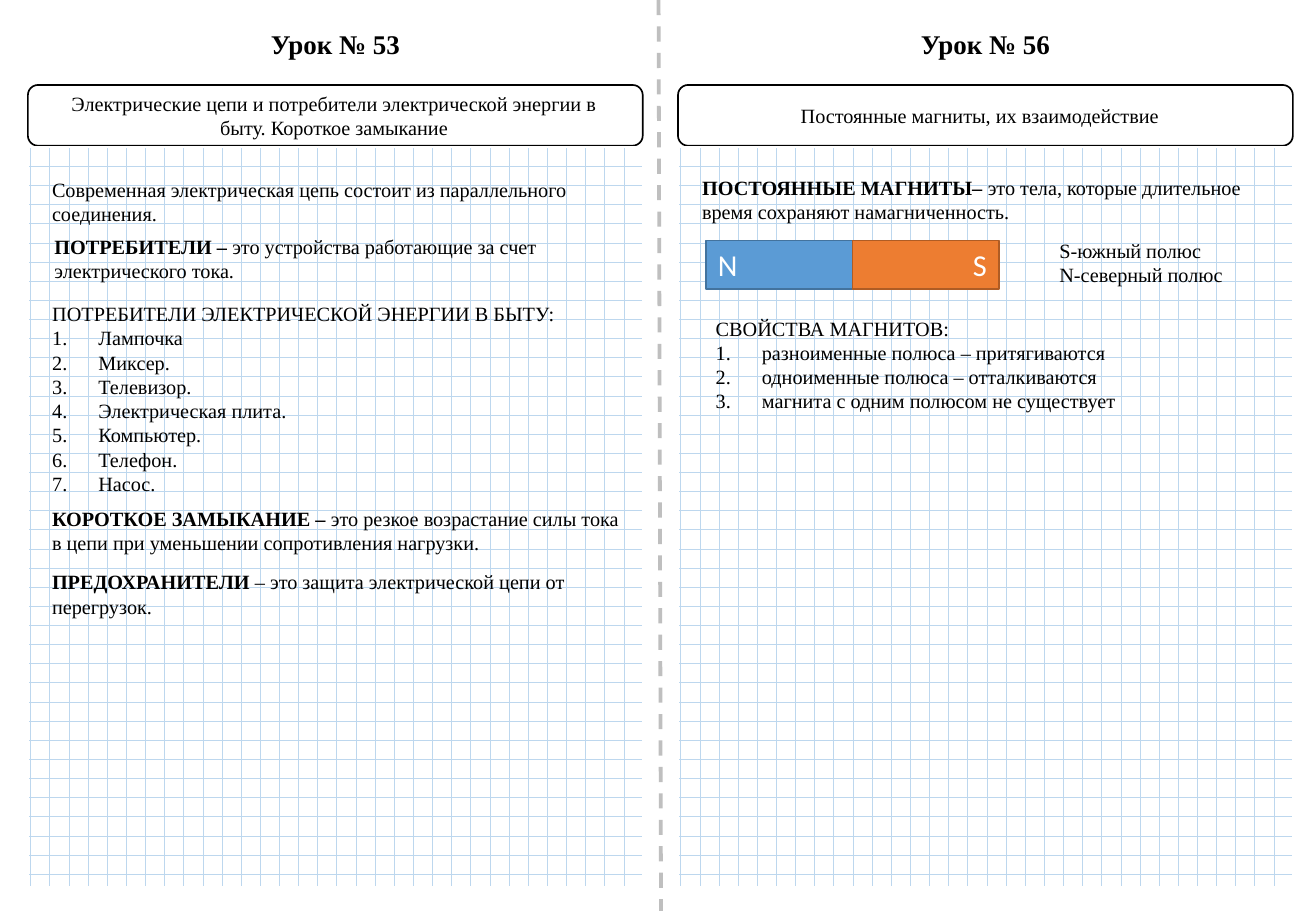
from lxml import etree
from pptx import Presentation
from pptx.dml.color import RGBColor
from pptx.enum import dml, shapes, text
from pptx.oxml import ns
from pptx.util import Inches, Pt

# Content: places are left, top, width, height in cells of the slide grid,
# with left counted from the start of the lesson's page
LESSONS = [
    {
        "heading": "Урок № 53",
        "topic": ("Электрические цепи и потребители электрической энергии в быту. "
                  "Короткое замыкание", (3.3, 7, 48.4, 5)),
        "list": ("ПОТРЕБИТЕЛИ ЭЛЕКТРИЧЕСКОЙ ЭНЕРГИИ В БЫТУ:",
                 ["Лампочка", "Миксер.", "Телевизор.", "Электрическая плита.",
                  "Компьютер.", "Телефон.", "Насос."], (3.3, 24.3, 46.7, 17.2)),
        "notes": [  # bold term, plain lines, place
            ("", ["Современная электрическая цепь состоит из параллельного соединения."],
             (3.3, 14.1, 48.4, 5)),
            ("ПОТРЕБИТЕЛИ – ", ["это устройства работающие за счет электрического тока."],
             (3.5, 18.8, 49.7, 5)),
            ("КОРОТКОЕ ЗАМЫКАНИЕ – ",
             ["это резкое возрастание силы тока в цепи при уменьшении сопротивления нагрузки."],
             (3.3, 41.2, 49.7, 5)),
            ("ПРЕДОХРАНИТЕЛИ", [" – это защита электрической цепи от перегрузок."],
             (3.3, 46.4, 48.4, 5)),
        ],
        "magnet": [],
    },
    {
        "heading": "Урок № 56",
        "topic": ("Постоянные магниты, их взаимодействие", (1.5, 8, 51.3, 3)),
        "list": ("СВОЙСТВА МАГНИТОВ:",
                 ["разноименные полюса – притягиваются",
                  "одноименные полюса – отталкиваются",
                  "магнита с одним полюсом не существует"], (4.4, 25.5, 44.4, 9.1)),
        "notes": [
            ("ПОСТОЯННЫЕ МАГНИТЫ– ",
             ["это тела, которые длительное время сохраняют намагниченность."],
             (3.3, 13.9, 49.7, 5)),
            ("", ["S-южный полюс", "N-северный полюс"], (32.7, 19.1, 16, 5)),
        ],
        "magnet": [  # pole, fill, line, alignment
            ("N", "5B9BD5", "43739E", text.PP_ALIGN.LEFT),
            ("S", "ED7D31", "AF5C24", text.PP_ALIGN.RIGHT),
        ],
    },
]
CELL = 0.1
PAGE_STEP = 53.5
HEADING = (2.3, 1.8, 50.6, 3.7)
TOPIC_FRAME = (2.3, 7, 50.6, 5)
NOTEBOOK = (2.3, 12.1, 50.6, 60.9)
MAGNET_LEFT, MAGNET_TOP, POLE_WIDTH, POLE_HEIGHT = 4.6, 19.8, 12.05, 4
NUMBER_INDENT = 3.8
COMPARISON_LAYOUT = 4
CENTER, LEFT = text.PP_ALIGN.CENTER, text.PP_ALIGN.LEFT


def color(value):
    return RGBColor.from_string(value)


def cells(count):
    return Inches(count * CELL)


prs = Presentation()
prs.slide_width, prs.slide_height = Inches(10.83), Inches(7.5)
slide = prs.slides.add_slide(prs.slide_layouts[COMPARISON_LAYOUT])
parts = slide.shapes
holders = {holder.placeholder_format.idx: holder for holder in slide.placeholders}


def place(part, page, box):
    left, top, width, height = box
    area = {"left": left + page * PAGE_STEP, "top": top, "width": width, "height": height}
    for side, count in area.items():
        setattr(part, side, cells(count))


def write(part, paragraphs, align=LEFT, size=12, font="Times New Roman",
          ink="000000", anchor=text.MSO_ANCHOR.TOP):
    """Each paragraph is (numbered, [(words, bold), ...])."""
    frame = part.text_frame
    for name, value in {"word_wrap": True, "auto_size": text.MSO_AUTO_SIZE.NONE,
                        "vertical_anchor": anchor}.items():
        setattr(frame, name, value)
    for index, (numbered, runs) in enumerate(paragraphs):
        line = frame.paragraphs[0] if index == 0 else frame.add_paragraph()
        for name, value in {"alignment": align, "space_before": Pt(0),
                            "line_spacing": 1.0}.items():
            setattr(line, name, value)
        # Numbering and indent
        props = line._p.get_or_add_pPr()
        indent = cells(NUMBER_INDENT) if numbered else 0
        props.set("marL", str(indent))
        props.set("indent", str(-indent))
        bullet = etree.SubElement(props, ns.qn("a:buAutoNum" if numbered else "a:buNone"))
        if numbered:
            bullet.set("type", "arabicPeriod")
        for words, bold in runs:
            run = line.add_run()
            run.text = words
            for name, value in {"size": Pt(size), "name": font, "bold": bold}.items():
                setattr(run.font, name, value)
            run.font.color.rgb = color(ink)


def add_box(kind, page, box, fill, line):
    part = parts.add_shape(kind, 0, 0, 0, 0)
    place(part, page, box)
    part.shadow.inherit = False
    part.fill.solid()
    part.fill.fore_color.rgb = color(fill)
    part.line.color.rgb = color(line)
    part.line.width = Pt(1)
    return part


def add_text(page, box, holder_id=None):
    if holder_id is None:
        part = parts.add_textbox(0, 0, 0, 0)
    else:
        part = holders[holder_id]
        parts.element.append(part.element)  # bring in front of the boxes
    place(part, page, box)
    return part


# Fold line between the pages
fold = parts.add_connector(shapes.MSO_CONNECTOR.STRAIGHT,
                           Inches(5.42), 0, Inches(5.44), prs.slide_height)
fold.line.color.rgb = color("BFBFBF")
fold.line.width = Pt(2.25)
fold.line.dash_style = dml.MSO_LINE.DASH
etree.SubElement(fold.element.spPr, ns.qn("a:effectLst"))

for page, lesson in enumerate(LESSONS):
    # Topic frame and squared paper
    add_box(shapes.MSO_SHAPE.FLOWCHART_ALTERNATE_PROCESS, page, TOPIC_FRAME, "FFFFFF", "000000")
    paper = add_box(shapes.MSO_SHAPE.FLOWCHART_PROCESS, page, NOTEBOOK, "FFFFFF", "FFFFFF")
    paper.fill.patterned()
    paper.fill.pattern = dml.MSO_PATTERN.DOTTED_GRID
    paper.fill.fore_color.rgb = color("BDD7EE")
    paper.fill.back_color.rgb = color("FFFFFF")

    # Heading and topic
    heading = add_text(page, HEADING, 0 if page == 0 else None)
    write(heading, [(False, [(lesson["heading"], True)])], CENTER, 16)
    topic, topic_box = lesson["topic"]
    write(add_text(page, topic_box, 1 + 2 * page), [(False, [(topic, False)])], CENTER)

    # Definitions
    for term, lines, box in lesson["notes"]:
        paragraphs = [(False, [(words, False)]) for words in lines]
        if term:
            paragraphs[0][1].insert(0, (term, True))
        write(add_text(page, box), paragraphs)

    # Numbered list
    caption, items, list_box = lesson["list"]
    write(add_text(page, list_box, 2 + 2 * page),
          [(False, [(caption, False)])] + [(True, [(item, False)]) for item in items])

    # Magnet poles, side by side
    for index, (pole, fill, line, align) in enumerate(lesson["magnet"]):
        box = (MAGNET_LEFT + index * POLE_WIDTH, MAGNET_TOP, POLE_WIDTH, POLE_HEIGHT)
        half = add_box(shapes.MSO_SHAPE.RECTANGLE, page, box, fill, line)
        write(half, [(False, [(pole, False)])], align, 18, "Calibri", "FFFFFF",
              text.MSO_ANCHOR.MIDDLE)

prs.save("out.pptx")
